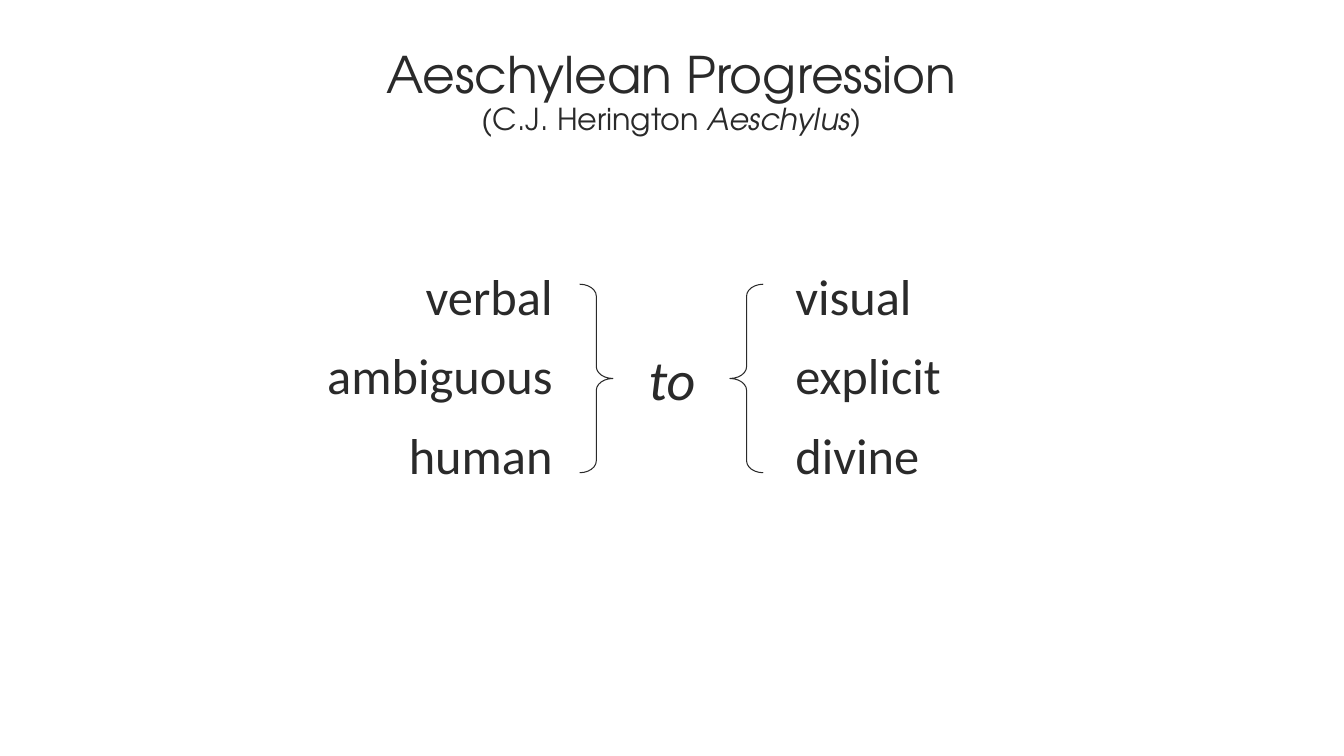
from pptx import Presentation
from pptx import util as u
from pptx.dml.color import RGBColor
from pptx.enum import shapes, text

INK = RGBColor(0x2A, 0x2A, 0x2A)
WHITE = RGBColor(0xFF, 0xFF, 0xFF)
TITLE_FONT = "TeX Gyre Adventor"
BODY_FONT = "Calibri"
ALIGN = text.PP_ALIGN


class SlideBuilder:
    def __init__(self, deck):
        self.page = deck.slides.add_slide(deck.slide_layouts[6])
        self.page.background.fill.solid()
        self.page.background.fill.fore_color.rgb = WHITE

    def text_box(self, left, top, width, height, wrap=True):
        box = self.page.shapes.add_textbox(
            u.Inches(left), u.Inches(top), u.Inches(width), u.Inches(height))
        frame = box.text_frame
        frame.word_wrap = wrap
        frame.vertical_anchor = text.MSO_ANCHOR.MIDDLE
        return frame

    def style(self, para, font, align, size=None):
        para.alignment = align
        para.font.name = font
        para.font.color.rgb = INK
        if size:
            para.font.size = u.Pt(size)

    def title(self, heading, author, work):
        para = self.text_box(3.64, 0.3, 6.04, 1.25).paragraphs[0]
        self.style(para, TITLE_FONT, ALIGN.CENTER)
        para.line_spacing = 0.9
        spans = [(heading, 36, False), (f"({author} ", 21.6, False),
                 (work, 21.6, True), (")", 21.6, False)]
        for words, size, italic in spans:
            span = para.add_run()
            span.text = words
            span.font.size = u.Pt(size)
            span.font.italic = italic
            if words == heading:
                para.add_line_break()

    def column(self, left, words, align):
        frame = self.text_box(left, 2.65, 3, 2.21)
        frame.text = "\n".join(words)
        for para in frame.paragraphs:
            self.style(para, BODY_FONT, align, 36)
            para.line_spacing = 0.9
            para.space_before = u.Pt(18)
            # Hanging indent
            indents = para._p.get_or_add_pPr()
            indents.set("marL", str(u.Inches(0.3)))
            indents.set("indent", str(u.Inches(-0.25)))

    def link_word(self, word):
        frame = self.text_box(6.33, 3.37, 0.67, 0.77, wrap=False)
        frame.auto_size = text.MSO_AUTO_SIZE.SHAPE_TO_FIT_TEXT
        frame.text = word
        para = frame.paragraphs[0]
        self.style(para, BODY_FONT, ALIGN.CENTER, 40)
        para.font.italic = True

    def brace(self, left, flipped=False):
        brace = self.page.shapes.add_shape(
            shapes.MSO_SHAPE.LEFT_BRACE,
            u.Inches(left), u.Inches(2.82), u.Inches(0.33), u.Inches(1.87))
        brace.adjustments[0] = 0.358
        brace.shadow.inherit = False
        brace.fill.background()
        brace.line.color.rgb = INK
        brace.line.width = u.Pt(0.75)
        if flipped:
            brace._element.spPr.xfrm.set("flipH", "1")


def main():
    deck = Presentation()
    deck.slide_width = u.Inches(13.33)
    deck.slide_height = u.Inches(7.5)
    slide = SlideBuilder(deck)

    # Heading
    slide.title("Aeschylean Progression", "C.J. Herington", "Aeschylus")

    # Starting and ending qualities
    slide.column(2.58, ["verbal", "ambiguous", "human"], ALIGN.RIGHT)
    slide.column(7.74, ["visual", "explicit", "divine"], ALIGN.LEFT)

    # Braces around the linking word
    slide.link_word("to")
    slide.brace(5.75, flipped=True)
    slide.brace(7.24)

    deck.save("out.pptx")


if __name__ == "__main__":
    main()
